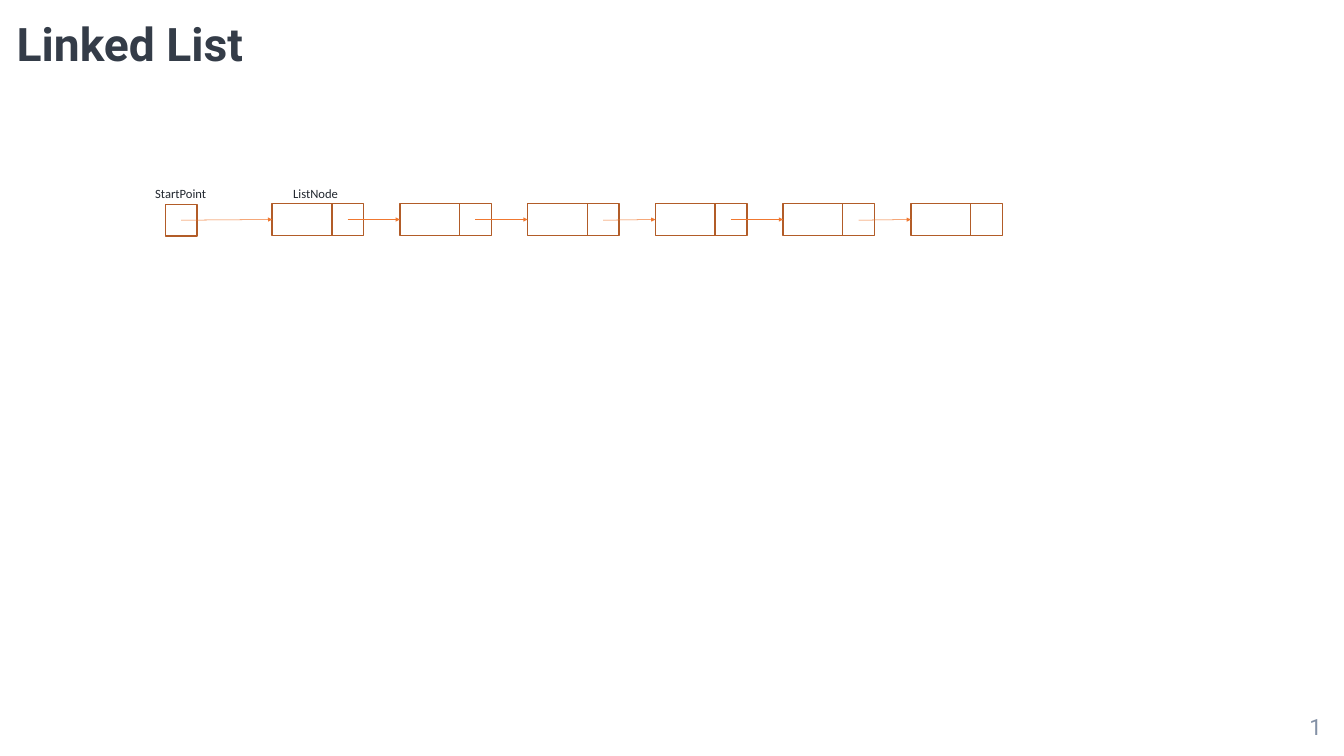
from lxml.etree import SubElement
from pptx import Presentation
from pptx.dml.color import RGBColor
from pptx.enum.shapes import MSO_CONNECTOR as Connector, MSO_SHAPE as Shape
from pptx.enum.text import MSO_ANCHOR as Anchor, MSO_AUTO_SIZE as AutoSize, PP_ALIGN as Align
from pptx.oxml.ns import qn
from pptx.util import Pt

NODE_COUNT = 6
NODE_LEFT, NODE_TOP, NODE_PITCH = 388.8, 290.9, 182.5
VALUE_WIDTH, CELL = 85.2, 45.5
START_LEFT, START_TOP = 236, 291.8
LOW_LINKS = (0, 3, 5)


def color(value):
    return RGBColor.from_string(value)


def apply(target, values):
    for key, value in values.items():
        setattr(target, key, value)


class ListSlide:
    outline, link_color = "B25C28", "F07830"
    title_font = {"name": "Roboto", "size": Pt(66), "bold": True}
    label_font = {"name": "Calibri", "size": Pt(18)}
    number_font = {"name": "Roboto", "size": Pt(32)}

    def __init__(self, deck):
        self.slide = deck.slides.add_slide(deck.slide_layouts[5])

    def place(self, element, left, top, width, height):
        apply(element, {"left": Pt(left), "top": Pt(top),
                        "width": Pt(width), "height": Pt(height)})

    def put_text(self, frame, text, font, text_color, **paragraph_format):
        paragraph = frame.paragraphs[0]
        apply(paragraph, paragraph_format)
        run = paragraph.add_run()
        run.text = text
        apply(run.font, font)
        run.font.color.rgb = color(text_color)
        return run

    def title(self, text):
        heading = self.slide.shapes.title
        self.place(heading, 16.6, 18.7, 664, 84.2)
        apply(heading.text_frame, {"vertical_anchor": Anchor.MIDDLE, "word_wrap": True,
                                   "auto_size": AutoSize.NONE})
        self.put_text(heading.text_frame, text, self.title_font, "343C48", alignment=Align.LEFT)

    def label(self, text, left, top, width, height):
        frame = self.slide.shapes.add_textbox(
            Pt(left), Pt(top), Pt(width), Pt(height)).text_frame
        apply(frame, {"word_wrap": False, "auto_size": AutoSize.SHAPE_TO_FIT_TEXT})
        self.put_text(frame, text, self.label_font, "21272F")

    def page_number(self, text):
        frame = self.slide.shapes.add_textbox(
            Pt(1725.8), Pt(996.5), Pt(196.6), Pt(64.8)).text_frame
        apply(frame, {"word_wrap": True, "vertical_anchor": Anchor.MIDDLE,
                      "margin_right": Pt(33.8)})
        run = self.put_text(frame, text, self.number_font, "8390A5", alignment=Align.RIGHT,
                            line_spacing=1.5, space_before=Pt(8.6))._r
        field = SubElement(run.getparent(), qn("a:fld"), type="slidenum",
                           id="{B6F15528-21DE-4FAA-801E-634DDDAF4B2B}")
        field.extend(list(run))
        run.getparent().remove(run)

    def cell(self, shapes, left, top, width):
        box = shapes.add_shape(Shape.RECTANGLE, Pt(left), Pt(top), Pt(width), Pt(CELL))
        box.shadow.inherit = False
        box.fill.background()
        box.line.color.rgb = color(self.outline)
        box.line.width = Pt(2)
        return box

    def node(self, left):
        shapes = self.slide.shapes.add_group_shape().shapes
        value = self.cell(shapes, left, NODE_TOP, VALUE_WIDTH)
        self.cell(shapes, left + VALUE_WIDTH, NODE_TOP, CELL)
        return value

    def link(self, left, top, target):
        arrow = self.slide.shapes.add_connector(
            Connector.STRAIGHT, Pt(left), Pt(top), target.left, Pt(top))
        arrow.end_connect(target, 1)
        arrow.line.color.rgb = color(self.link_color)
        arrow.line.width = Pt(0.75)
        properties = arrow._element.spPr
        SubElement(properties.find(qn("a:ln")), qn("a:tailEnd"), type="triangle")
        SubElement(properties, qn("a:effectLst"))


def main():
    deck = Presentation()
    apply(deck, {"slide_width": Pt(1920), "slide_height": Pt(1080)})
    page = ListSlide(deck)
    page.title("Linked List")
    page.page_number("1")

    lefts = [NODE_LEFT + i * NODE_PITCH for i in range(NODE_COUNT)]
    nodes = [page.node(left) for left in lefts]
    page.cell(page.slide.shapes, START_LEFT, START_TOP, CELL)
    page.label("StartPoint", 214.6, 261.4, 87.8, 28.8)
    page.label("ListNode", 411.8, 261.4, 79.2, 28.8)

    origins = [START_LEFT] + [left + VALUE_WIDTH for left in lefts[:-1]]
    for i, (origin, target) in enumerate(zip(origins, nodes)):
        top = START_TOP if i in LOW_LINKS else NODE_TOP
        page.link(origin + CELL / 2, top + CELL / 2, target)

    deck.save("out.pptx")


if __name__ == "__main__":
    main()
